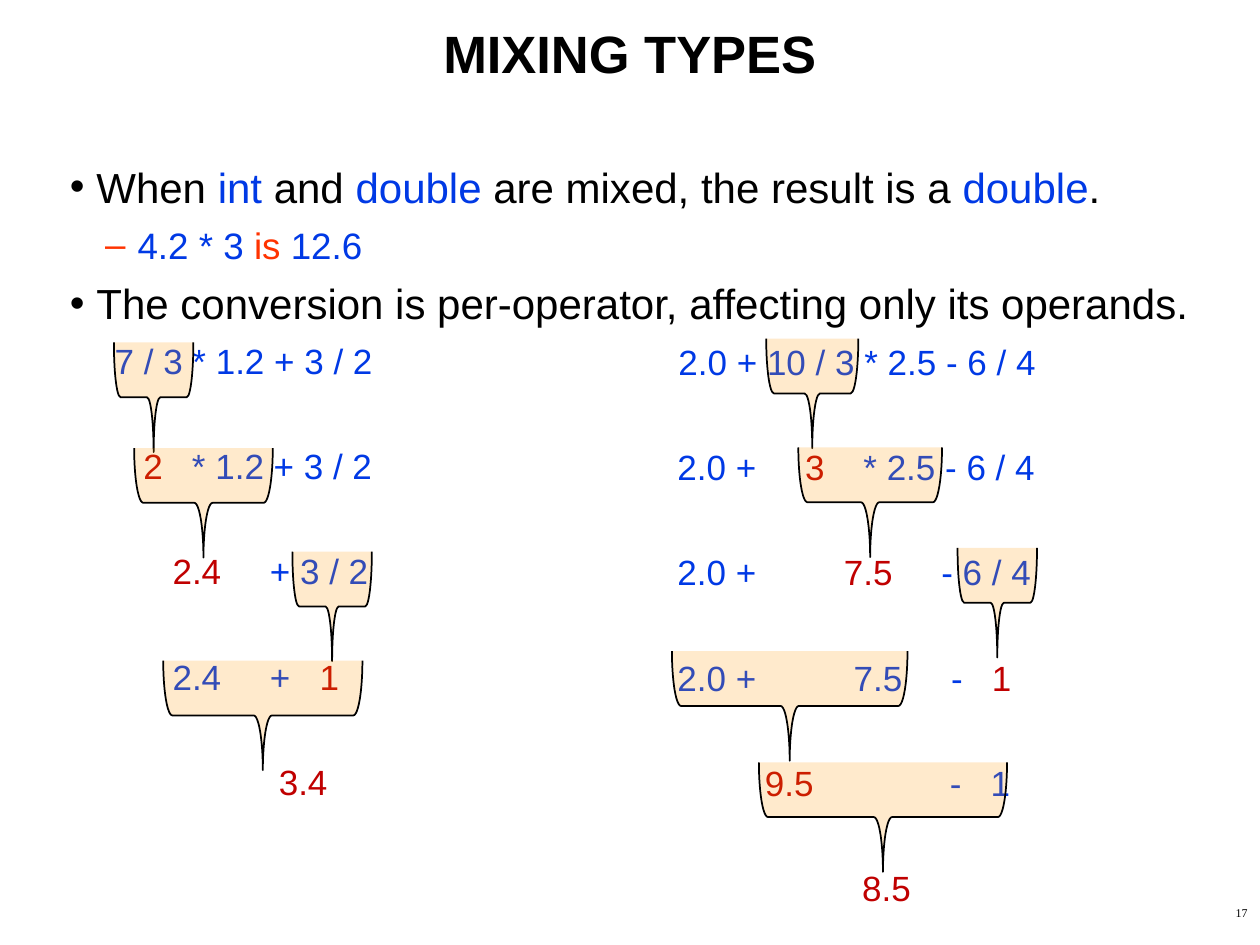
"""Build the slide on mixing int and double types in expressions."""
from lxml import etree
from pptx import Presentation
from pptx.dml.color import RGBColor
from pptx.enum import shapes, text
from pptx.oxml import ns
from pptx.util import Pt

COLORS = {"black": "000000", "blue": "0039E5", "orange": "FF3300",
          "red": "C00000", "brace": "FF9900"}
SPACE = 5.56


def sub(parent, tag, **attrs):
    return etree.SubElement(parent, ns.qn(tag), attrs)


def add_para(tf, runs, size, level=0, before=0.2, left=0, hang=0, bullet=None):
    p = tf.paragraphs[0] if not tf.text else tf.add_paragraph()
    fmt = {"level": level, "space_before": Pt(before), "space_after": Pt(6), "line_spacing": 1.0}
    for name, value in fmt.items():
        setattr(p, name, value)
    pPr = p._p.get_or_add_pPr()
    pPr.set("marL", str(Pt(left)))
    pPr.set("indent", str(Pt(-hang)))
    if bullet:
        sub(sub(pPr, "a:buClr"), "a:srgbClr", val=COLORS["orange" if level else "black"])
        sub(pPr, "a:buChar", char=bullet)
    else:
        sub(pPr, "a:buNone")
    for words, color in runs:
        r = p.add_run()
        r.text = words if isinstance(words, str) else " "
        for name, value in {"size": Pt(size), "name": "Arial"}.items():
            setattr(r.font, name, value)
        r.font.color.rgb = RGBColor.from_string(COLORS[color])
        if not isinstance(words, str):
            r._r.get_or_add_rPr().set("spc", str(round((words - 1) * SPACE * 100)))
    return p


prs = Presentation()
prs.slide_width, prs.slide_height = Pt(720), Pt(540)
s = prs.slides.add_slide(prs.slide_layouts[1])
title, body = s.shapes.title, s.placeholders[1]
right = s.shapes.add_textbox(0, 0, 0, 0)
number = s.shapes.add_textbox(0, 0, 0, 0)

boxes = [(title, 0, 0, 720, 60.5), (body, 32.4, 88.5, 658.8, 425),
         (right, 360, 190.8, 306, 323), (number, 570, 514, 150, 26)]
for sp, *box in boxes:
    for name, value in zip(("left", "top", "width", "height"), box):
        setattr(sp, name, Pt(value))
    sp.text_frame.word_wrap = True
    sp.text_frame.auto_size = text.MSO_AUTO_SIZE.NONE

title.text_frame.vertical_anchor = text.MSO_ANCHOR.MIDDLE
p = add_para(title.text_frame, [("MIXING TYPES", "black")], 30, before=0)
p.alignment = text.PP_ALIGN.CENTER
p.runs[0].font.bold = True

p = add_para(number.text_frame, [("17", "black")], 6.8, before=0)
p.alignment = text.PP_ALIGN.RIGHT
p.runs[0].font.name = "Times New Roman"

tf = body.text_frame
add_para(tf, [("When ", "black"), ("int", "blue"), (" and ", "black"),
              ("double", "blue"), (" are mixed, the result is a ", "black"),
              ("double", "blue"), (".", "black")],
         24, before=1.5, left=15.5, hang=15.2, bullet="•")
add_para(tf, [("4.2 * 3 ", "blue"), ("is ", "orange"), ("12.6", "blue")],
         21, 1, left=39, hang=18.5, bullet="–")
add_para(tf, [("The conversion is per-operator, affecting only its operands.", "black")],
         24, left=15.5, hang=15.2, bullet="•")

left_steps = [
    (25.9, [("7 / 3 * 1.2 + 3 / 2", "blue")]),
    (42.3, [("2", "red"), (3, "blue"), ("* 1.2 + 3 / 2", "blue")]),
    (59, [("2.4", "red"), (5, "blue"), ("+ 3 / 2", "blue")]),
    (59, [("2.4", "blue"), (5, "blue"), ("+", "blue"), (3, "blue"), ("1", "red")]),
    (119.7, [("3.4", "red")]),
]
right_steps = [
    (20.6, [("2.0 + 10 / 3 * 2.5 - 6 / 4", "blue")]),
    (20, [("2.0 +", "blue"), (5, "blue"), ("3", "red"), (4, "blue"), ("* 2.5 - 6 / 4", "blue")]),
    (20, [("2.0 +", "blue"), (9, "blue"), ("7.5", "red"), (5, "blue"), ("- 6 / 4", "blue")]),
    (20, [("2.0 +", "blue"), (10, "blue"), ("7.5", "blue"), (5, "blue"), ("-", "blue"),
          (3, "blue"), ("1", "red")]),
    (70, [("9.5", "red"), (14, "blue"), ("-", "blue"), (3, "blue"), ("1", "blue")]),
    (125.6, [("8.5", "red")]),
]
for tf, steps, first_gap in ((body.text_frame, left_steps, 0.5),
                             (right.text_frame, right_steps, 1)):
    for i, (left, runs) in enumerate(steps):
        add_para(tf, runs, 20, 1, before=30.2 if i else first_gap, left=left)

DEPTH = 62.6
braces = [(87.8, 227, 45.4), (116.3, 287.3, 79.2), (189.8, 346.5, 45.4),
          (150.2, 408.8, 113.8), (464.2, 224.8, 52.6), (497.3, 287, 82.1),
          (569.9, 344.4, 45.4), (451.3, 403.4, 134.6), (504.6, 466.9, 141.8)]
for cx, cy, span in braces:
    sp = s.shapes.add_shape(shapes.MSO_SHAPE.LEFT_BRACE, Pt(cx - DEPTH / 2),
                            Pt(cy - span / 2), Pt(DEPTH), Pt(span))
    sp.rotation = 270
    sp.shadow.inherit = False
    sp.fill.solid()
    sp.fill.fore_color.rgb = RGBColor.from_string(COLORS["brace"])
    sub(sp.fill._xPr.find(".//" + ns.qn("a:srgbClr")), "a:alpha", val="20000")
    sp.line.color.rgb = RGBColor.from_string(COLORS["black"])
    sp.line.width = Pt(1)

prs.save("out.pptx")
